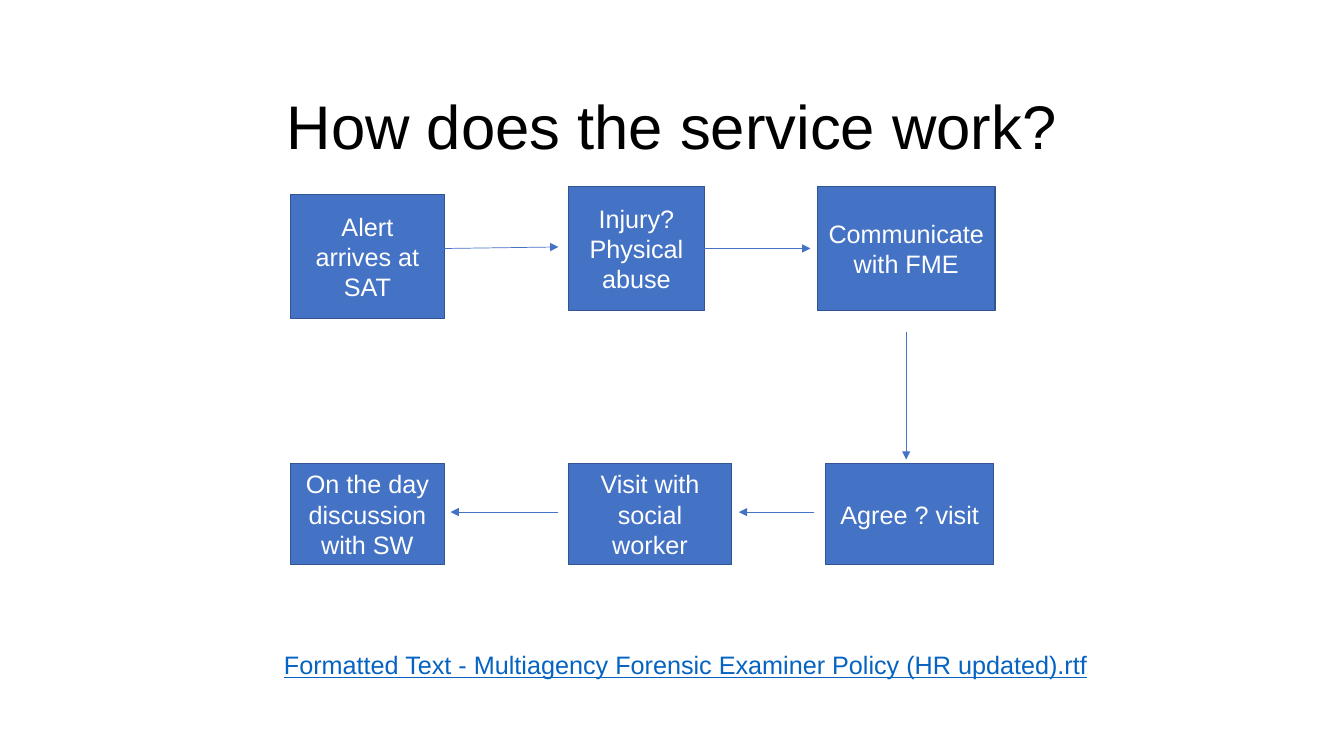
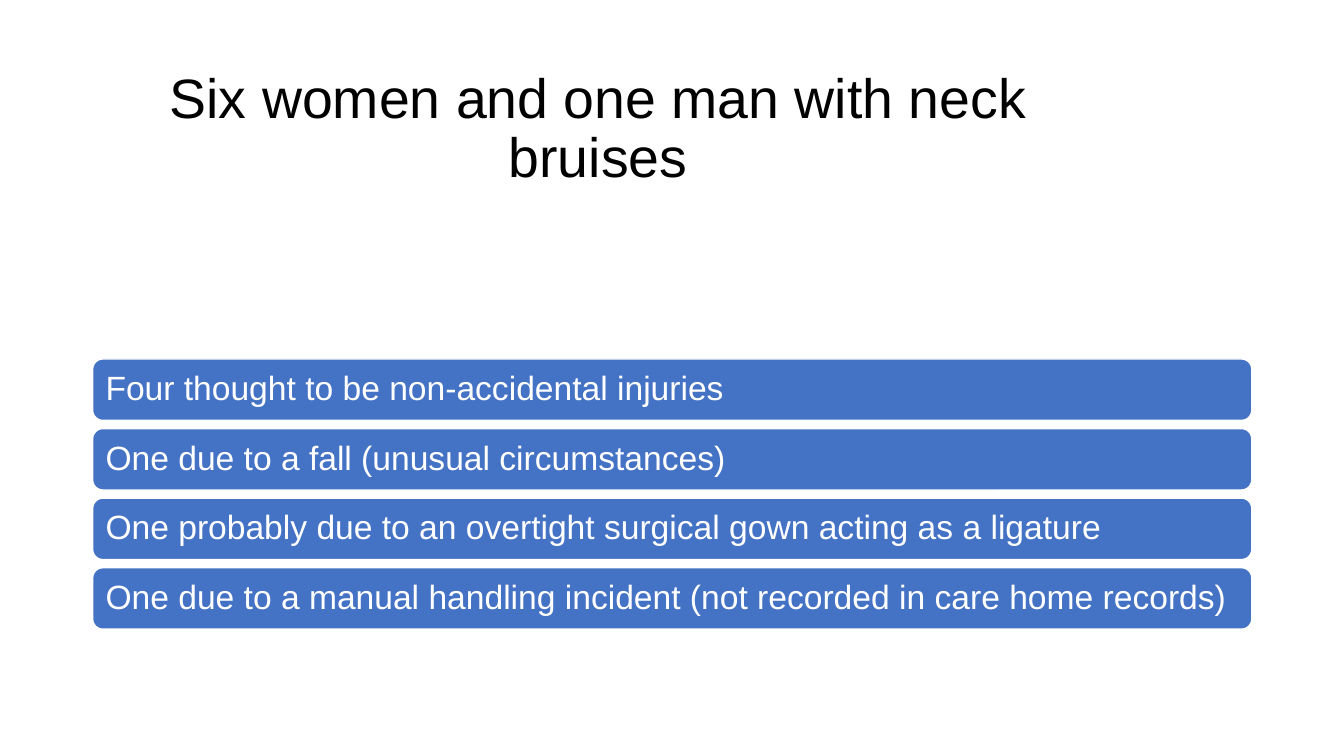
"""Builds two slides: a service flow of six steps and a list of four findings."""
from lxml import etree
from pptx import Presentation
from pptx import util as u
from pptx.dml.color import RGBColor
from pptx.enum import shapes, text
from pptx.oxml.ns import qn

THEME = {
    "font": "Arial",
    "black": "000000", "white": "FFFFFF", "blue": "4472C4", "edge": "325491", "link": "0563C1",
    "title": 44, "small": 39.6, "step": 18, "bar": 24,
    "rule": 1, "arrow": 0.5,
}
CENTER, LEFT = text.PP_ALIGN.CENTER, text.PP_ALIGN.LEFT

TITLES = [
    ("How does the service work?", 828, "title"),
    ("Six women and one man with neck bruises", 722, "small"),
]
STEPS = [
    ("Alert arrives at SAT", 207.4, 139, 110, 88.6),
    ("Injury? Physical abuse", 406, 133.2, 97.2, 88.6),
    ("Communicate with FME", 584, 133.2, 126.7, 88.6),
    ("Agree ? visit", 589.7, 331.2, 120.2, 72),
    ("Visit with social worker", 406, 331.2, 116.6, 72),
    ("On the day discussion with SW", 207.4, 331.2, 110, 72),
]
ARROWS = [
    (295.2, 177.8, 398.9, 176.4, None),
    (503.2, 177.5, 578.9, 177.5, 1),
    (647.3, 236.9, 647.3, 328.3, None),
    (581.8, 365.8, 527.8, 365.8, None),
    (398.9, 365.8, 321.8, 365.8, None),
]
POLICY = "Formatted Text - Multiagency Forensic Examiner Policy (HR updated).rtf"
FINDINGS = [
    "Four thought to be non-accidental injuries",
    "One due to a fall (unusual circumstances)",
    "One probably due to an overtight surgical gown acting as a ligature",
    "One due to a manual handling incident (not recorded in care home records)",
]
BAR = {"left": 66.2, "top": 256.4, "width": 828, "height": 43.9, "pitch": 49.7}


def color(name):
    return RGBColor.from_string(THEME[name])


def apply(item, values):
    for key, value in values.items():
        setattr(item, key, value)


def write(shape, words, size, tone, align=CENTER, lead=None, wrap=True, under=None):
    frame = shape.text_frame
    apply(frame, {"word_wrap": wrap, "vertical_anchor": text.MSO_ANCHOR.MIDDLE})
    para = frame.paragraphs[0]
    apply(para, {"alignment": align, "line_spacing": lead})
    run = para.add_run()
    run.text = words
    apply(run.font, {"name": THEME["font"], "size": u.Pt(THEME[size]), "underline": under})
    run.font.color.rgb = color(tone)


def add_box(slide, kind, area, edge):
    box = slide.shapes.add_shape(kind, *map(u.Pt, area))
    box.shadow.inherit = False
    box.fill.solid()
    box.fill.fore_color.rgb = color("blue")
    box.line.color.rgb = color(edge)
    box.line.width = u.Pt(THEME["rule"])
    return box


def add_arrow(slide, ends, start):
    line = slide.shapes.add_connector(shapes.MSO_CONNECTOR.STRAIGHT, *map(u.Pt, ends))
    if start is not None:
        line.begin_connect(start, 3)
    line.line.color.rgb = color("blue")
    line.line.width = u.Pt(THEME["arrow"])
    props = line._element.spPr
    etree.SubElement(props.find(qn("a:ln")), qn("a:tailEnd"), type="triangle")
    etree.SubElement(props, qn("a:effectLst"))


def add_slide(deck, title):
    words, width, size = title
    slide = deck.slides.add_slide(deck.slide_layouts[6])
    box = slide.shapes.add_textbox(*map(u.Pt, (66.2, 53.3, width, 79.2)))
    write(box, words, size, "black", lead=0.9)
    return slide


def add_flow(slide):
    boxes = []
    for words, *area in STEPS:
        box = add_box(slide, shapes.MSO_SHAPE.RECTANGLE, area, "edge")
        write(box, words, "step", "white")
        boxes.append(box)
    for *ends, start in ARROWS:
        add_arrow(slide, ends, None if start is None else boxes[start])
    link = slide.shapes.add_textbox(*map(u.Pt, (195.8, 460.1, 594.7, 29.1)))
    write(link, POLICY, "step", "link", LEFT, wrap=False, under=True)


def add_bars(slide):
    for row, words in enumerate(FINDINGS):
        area = BAR["left"], BAR["top"] + row * BAR["pitch"], BAR["width"], BAR["height"]
        bar = add_box(slide, shapes.MSO_SHAPE.ROUNDED_RECTANGLE, area, "white")
        write(bar, words, "bar", "white", LEFT, lead=0.9)


def main():
    deck = Presentation()
    apply(deck, {"slide_width": u.Pt(960), "slide_height": u.Pt(540)})
    for title, fill in zip(TITLES, (add_flow, add_bars)):
        fill(add_slide(deck, title))
    deck.save("out.pptx")


if __name__ == "__main__":
    main()
